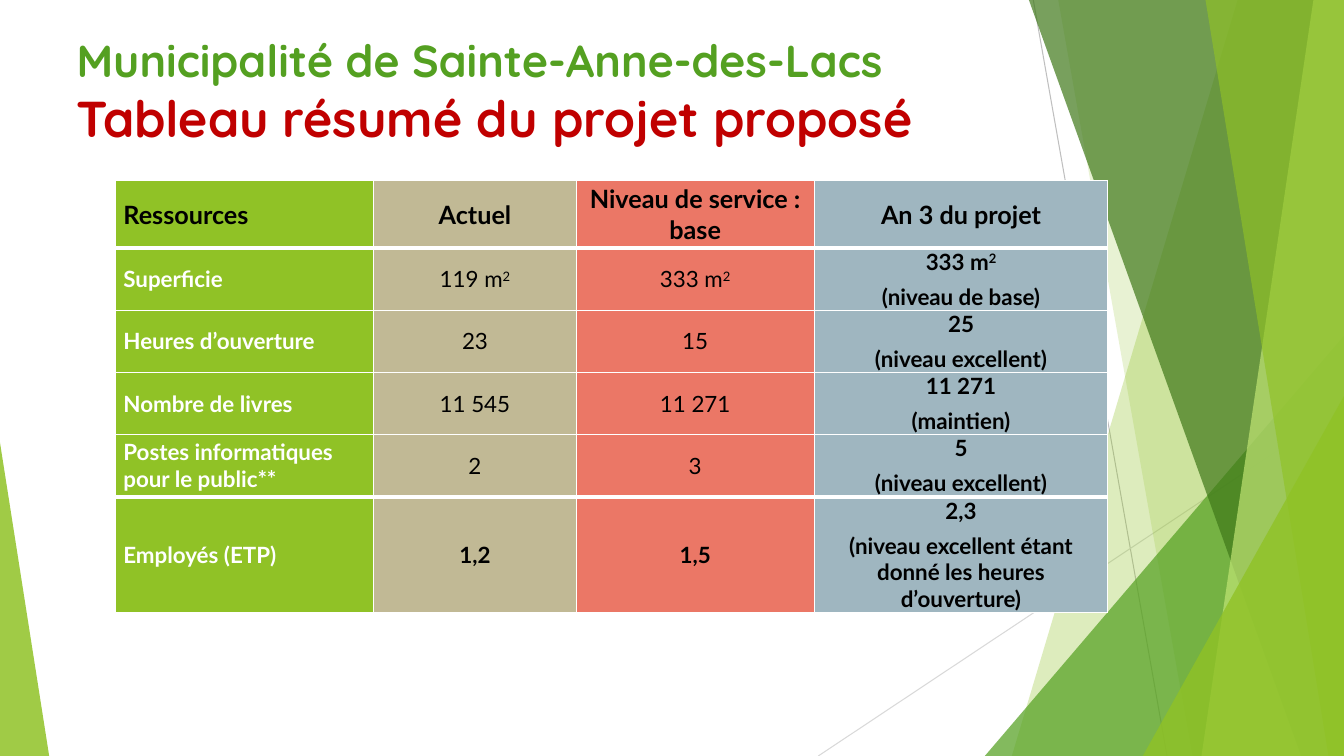
import pptx
import pptx.dml.color
import pptx.enum.shapes
import pptx.enum.text
import pptx.util
from pptx.oxml.ns import qn
from lxml import etree

Cm = pptx.util.Cm
Pt = pptx.util.Pt
SLIDE_WIDTH, SLIDE_HEIGHT = 33.87, 19.05

TITLE = [
    ("Municipalité de Sainte-Anne-des-Lacs", 32, "54A021"),
    ("Tableau résumé du projet proposé", 36, "C00000"),
]
RESOURCES = [
    [["Ressources"], ["Actuel"], ["Niveau de service : base"], ["An 3 du projet"]],
    [["Superficie"], ["119 m^2"], ["333 m^2"], ["333 m^2", "(niveau de base)"]],
    [["Heures d’ouverture"], ["23"], ["15"], ["25", "(niveau excellent)"]],
    [["Nombre de livres"], ["11 545"], ["11 271"], ["11 271", "(maintien)"]],
    [["Postes informatiques pour le public**"], ["2"], ["3"], ["5", "(niveau excellent)"]],
    [["Employés (ETP)"], ["1,2"], ["1,5"],
     ["2,3", "(niveau excellent étant donné les heures d’ouverture)"]],
]
COLUMN_WIDTHS = [6.5, 5.1, 6, 7.4]
COLUMN_COLORS = ["90C226", "C1B995", "EB7766", "9FB6C0"]
ROW_HEIGHTS = [1.7] + [1.55] * 4 + [2.9]
THICK_RULES = {1, 5}

RAYS = [
    ((26.04, 0), (29.41, SLIDE_HEIGHT), "BFBFBF"),
    ((SLIDE_WIDTH, 10.24), (20.62, SLIDE_HEIGHT), "D9D9D9"),
]
FACETS = [
    ("band", (31.19, 25.5), "90C226", 30),
    ("band", (26.67, 30.05), "90C226", 20),
    ("triangle", (24.82, 8.46, 9.05, 1), "54A021", 72),
    ("band", (25.93, 32.79), "3F7819", 70),
    ("band", (33.1, 30.28), "C0E474", 70),
    ("band", (30.38, 33.48), "90C226", 65),
    ("triangle", (28.8, 9.98, 5.07, 1), "90C226", 80),
    ("triangle", (0, 11.15, 1.24, 0), "90C226", 85),
]


def paint(color_format, color):
    color_format.rgb = pptx.dml.color.RGBColor.from_string(color)


def add_ray(slide, start, end, color):
    ray = slide.shapes.add_connector(
        pptx.enum.shapes.MSO_CONNECTOR.STRAIGHT, *(Cm(v) for v in start + end))
    ray.line.width = Pt(0.75)
    paint(ray.line.color, color)
    etree.SubElement(ray._element.spPr, qn("a:effectLst"))


def add_facet(slide, kind, place, color, opacity):
    if kind == "band":
        top_x, bottom_x = place
        outline = slide.shapes.build_freeform(Cm(top_x), 0)
        outline.add_line_segments([
            (Cm(SLIDE_WIDTH), 0), (Cm(SLIDE_WIDTH), Cm(SLIDE_HEIGHT)),
            (Cm(bottom_x), Cm(SLIDE_HEIGHT))], close=True)
        facet = outline.convert_to_shape()
    else:
        left, top, width, apex = place
        facet = slide.shapes.add_shape(
            pptx.enum.shapes.MSO_SHAPE.ISOSCELES_TRIANGLE,
            Cm(left), Cm(top), Cm(width), Cm(SLIDE_HEIGHT - top))
        facet.adjustments[0] = apex
    facet.shadow.inherit = False
    facet.line.fill.background()
    facet.fill.solid()
    paint(facet.fill.fore_color, color)
    tint = facet._element.spPr.find(qn("a:solidFill"))[0]
    etree.SubElement(tint, qn("a:alpha"), val=str(opacity * 1000))


def add_run(paragraph, text, size, font, color, bold):
    run = paragraph.add_run()
    run.text = text
    run.font.size = Pt(size)
    run.font.name = font
    run.font.bold = bold
    paint(run.font.color, color)
    return run


def add_title(slide):
    title = slide.shapes.add_textbox(Cm(1.68), Cm(0.71), Cm(23.88), Cm(3.66)).text_frame
    title.word_wrap = True
    for i, (text, size, color) in enumerate(TITLE):
        line = title.add_paragraph() if i else title.paragraphs[0]
        add_run(line, text, size, "Quicksand", color, True)


def rule_cell(cell, row):
    widths = {"L": 1, "R": 1,
              "T": 3 if row in THICK_RULES else 1,
              "B": 3 if row + 1 in THICK_RULES else 1}
    properties = cell._tc.get_or_add_tcPr()
    for side, width in widths.items():
        border = etree.SubElement(properties, qn("a:ln" + side), w=str(Pt(width)))
        fill = etree.SubElement(border, qn("a:solidFill"))
        etree.SubElement(fill, qn("a:srgbClr"), val="FFFFFF")


def fill_cell(cell, row, column, paragraphs):
    rule_cell(cell, row)
    cell.fill.solid()
    paint(cell.fill.fore_color, COLUMN_COLORS[column])
    cell.margin_left = cell.margin_right = Cm(0.19)
    cell.margin_top = cell.margin_bottom = 0
    cell.vertical_anchor = pptx.enum.text.MSO_ANCHOR.MIDDLE
    size = 18 if row == 0 else 16
    color = "FFFFFF" if column == 0 and row else "000000"
    bold = row in (0, len(RESOURCES) - 1) or column in (0, len(COLUMN_WIDTHS) - 1)
    for i, text in enumerate(paragraphs):
        paragraph = cell.text_frame.add_paragraph() if i else cell.text_frame.paragraphs[0]
        paragraph.space_before = paragraph.space_after = Pt(3)
        if column:
            paragraph.alignment = pptx.enum.text.PP_ALIGN.CENTER
        base, _, exponent = text.partition("^")
        add_run(paragraph, base, size, "Lato", color, bold)
        if exponent:
            raised = add_run(paragraph, exponent, size, "Lato", color, bold)
            raised._r.get_or_add_rPr().set("baseline", "30000")


def add_resources(slide):
    table = slide.shapes.add_table(
        len(ROW_HEIGHTS), len(COLUMN_WIDTHS), Cm(2.92), Cm(4.55),
        Cm(sum(COLUMN_WIDTHS)), Cm(sum(ROW_HEIGHTS))).table
    for column, width in enumerate(COLUMN_WIDTHS):
        table.columns[column].width = Cm(width)
    for row, height in enumerate(ROW_HEIGHTS):
        table.rows[row].height = Cm(height)
        for column, paragraphs in enumerate(RESOURCES[row]):
            fill_cell(table.cell(row, column), row, column, paragraphs)


def main():
    presentation = pptx.Presentation()
    presentation.slide_width = Cm(SLIDE_WIDTH)
    presentation.slide_height = Cm(SLIDE_HEIGHT)
    slide = presentation.slides.add_slide(presentation.slide_layouts[6])
    for ray in RAYS:
        add_ray(slide, *ray)
    for facet in FACETS:
        add_facet(slide, *facet)
    add_title(slide)
    add_resources(slide)
    presentation.save("out.pptx")


if __name__ == "__main__":
    main()
